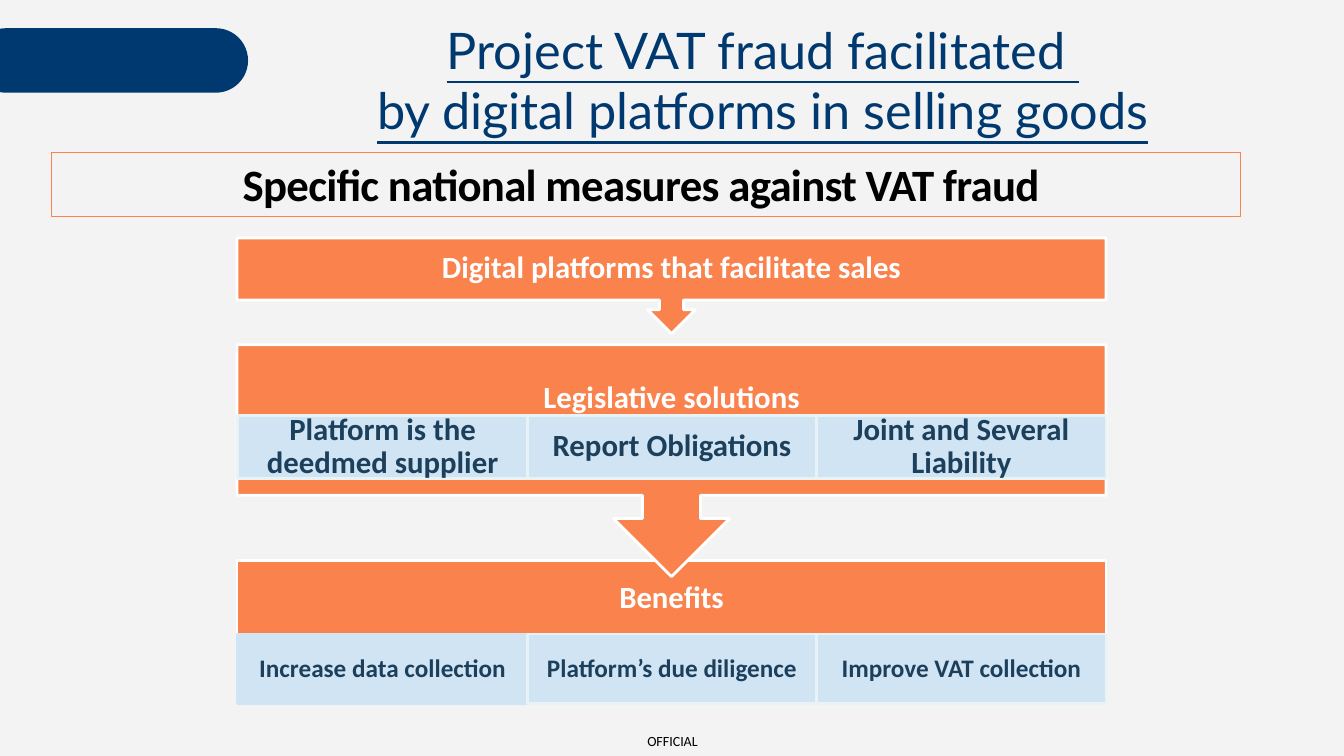
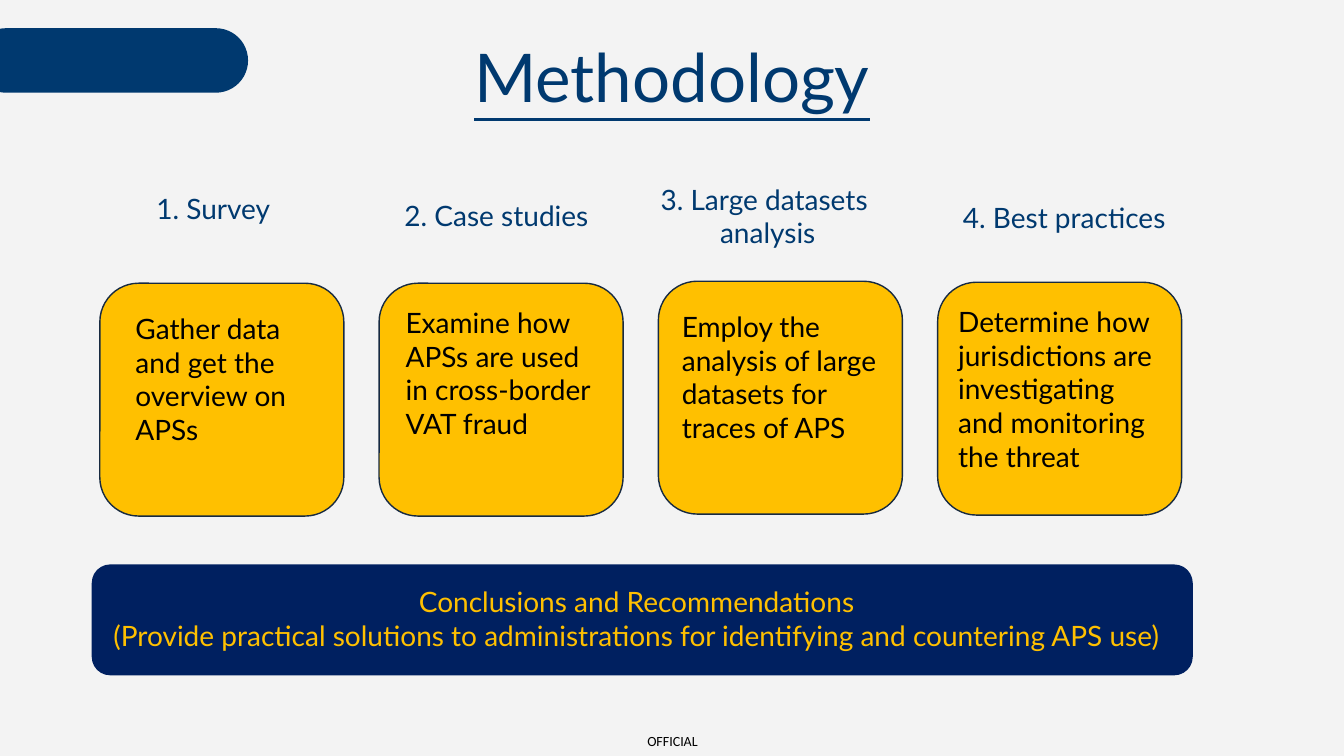
from pptx import Presentation, util as u
from pptx.dml.color import RGBColor
from pptx.enum import shapes, text

PX = 9144  # 100 px to the inch
NAVY, ORANGE, GOLD, WHITE, BLACK = "00396F", "F9824D", "FFC000", "FFFFFF", "000000"
PALE, PALE_EDGE, INK = "D1E4F4", "E7F3F4", "1C405C"
KIND, ALIGN, ANCHOR = shapes.MSO_SHAPE, text.PP_ALIGN, text.MSO_ANCHOR


def put(page, kind, box, fill=None, line=None, weight=2):
    """Add a preset shape, or a text box when kind is None."""
    place = [n * PX for n in box]
    if kind is None:
        return page.shapes.add_textbox(*place)
    shape = page.shapes.add_shape(kind, *place)
    shape.shadow.inherit = False
    if fill:
        shape.fill.solid()
        shape.fill.fore_color.rgb = RGBColor.from_string(fill)
    else:
        shape.fill.background()
    if line:
        shape.line.color.rgb = RGBColor.from_string(line)
        shape.line.width = u.Pt(weight)
    else:
        shape.line.fill.background()
    return shape


def write(shape, lines, size, color, font="Lato", bold=None, underline=None,
          align=ALIGN.CENTER, anchor=ANCHOR.TOP, insets=(10, 5, 10, 5), spacing=None):
    """Fill a shape with one paragraph per line and return the last run."""
    frame = shape.text_frame
    frame.word_wrap = True
    frame.auto_size = text.MSO_AUTO_SIZE.NONE
    frame.vertical_anchor = anchor
    frame.margin_left, frame.margin_top, frame.margin_right, frame.margin_bottom = [
        n * PX for n in insets]
    for i, words in enumerate(lines):
        para = frame.add_paragraph() if i else frame.paragraphs[0]
        para.alignment = align
        if spacing:
            para.line_spacing = spacing
        span = para.add_run()
        span.text = words
        span.font.name, span.font.size = font, u.Pt(size)
        span.font.bold, span.font.underline = bold, underline
        span.font.color.rgb = RGBColor.from_string(color)
    return span


deck = Presentation()
deck.slide_width, deck.slide_height = 1333 * PX, 750 * PX
backdrop = deck.slide_master.background.fill
backdrop.solid()
backdrop.fore_color.rgb = RGBColor.from_string("F3F3F3")

layout = deck.slide_layouts.get_by_name("Title Only")
for holder in list(layout.placeholders)[1:]:
    holder.element.getparent().remove(holder.element)

titles = [
    (["Project VAT fraud facilitated ", "by digital platforms in selling goods"],
     36, (240, 13, 1033, 131)),
    (["Methodology"], 48, (150, 28, 1033, 94)),
]
pages = []
for lines, size, box in titles:
    page = deck.slides.add_slide(layout)
    title = page.shapes.title
    title.left, title.top, title.width, title.height = [n * PX for n in box]
    write(title, lines, size, NAVY, underline=True, anchor=ANCHOR.MIDDLE)
    pages.append(page)
measures, method = pages

# Band and footer belong to the layout, so both slides show them
band = put(measures, KIND.ROUNDED_RECTANGLE, (-26, 28, 272, 64), NAVY)
band.adjustments[0] = 0.5
footer = put(measures, None, (627, 721, 80, 29))
write(footer, ["OFFICIAL"], 10, BLACK, "Calibri", anchor=ANCHOR.MIDDLE, insets=(0, 0, 0, 0))
for shared in (band, footer):
    layout.shapes.element.append(shared.element)

# Slide 1: measures
subtitle = put(measures, KIND.RECTANGLE, (51, 151, 1179, 64), None, ORANGE, 0.75)
span = write(subtitle, ["Specific national measures against VAT fraud "], 32, BLACK,
             "Calibri", bold=True)
span.font._element.set("spc", "-50")

# Stages run from the bottom up, so that each arrow lies over the stage below it
stages = [
    ("Benefits", KIND.RECTANGLE, 556, 140, 75, 629, 69, 18, 14,
     ["Increase data collection", "Platform’s due diligence", "Improve VAT collection"]),
    ("Legislative solutions", KIND.DOWN_ARROW_CALLOUT, 342, 230, 52, 412, 63, 22, 17,
     ["Platform is the deedmed supplier", "Report Obligations", "Joint and Several Liability"]),
    ("Digital platforms that facilitate sales", KIND.DOWN_ARROW_CALLOUT, 236, 95, 10,
     0, 0, 0, 0, []),
]
for name, kind, top, height, below, cell_top, cell_height, size, side, cells in stages:
    stage = put(measures, kind, (235, top, 862, height), ORANGE, WHITE)
    write(stage, [name], 22, WHITE, "Calibri", bold=True, anchor=ANCHOR.MIDDLE,
          insets=(17, 10, 17, below), spacing=0.9)
    for i, words in enumerate(cells):
        edge = PALE if name == "Benefits" and i == 0 else PALE_EDGE
        cell = put(measures, KIND.RECTANGLE, (236 + 287 * i, cell_top, 287, cell_height),
                   PALE, edge)
        write(cell, [words], size, INK, "Calibri", bold=True, anchor=ANCHOR.MIDDLE,
              insets=(side, 3, side, 3), spacing=0.9)

# Slide 2: methodology
steps = [
    (["1. Survey"], (95, 185, 233, 44), 281, (24, 17, 0, 0),
     "Gather data and get the overview on APSs"),
    (["2. Case studies"], (376, 192, 233, 44), 281, (15, 11, 17, 0),
     "Examine how APSs are used in cross-border VAT fraud"),
    (["3. Large datasets ", "analysis"], (628, 176, 267, 77), 279, (12, 17, 0, 0),
     "Employ the analysis of large datasets for traces of APS"),
    (["4. Best practices"], (939, 194, 233, 44), 280, (9, 11, 13, 0),
     "Determine how jurisdictions are investigating and monitoring the threat"),
]
for i, (heading, heading_box, top, insets, words) in enumerate(steps):
    write(put(method, None, heading_box), heading, 20, NAVY)
    card = put(method, KIND.ROUNDED_RECTANGLE, (99 + 277 * i, top, 242, 231),
               GOLD, "172A41", 1)
    write(card, [words], 20, BLACK, align=ALIGN.LEFT, insets=insets)

conclusion = put(method, KIND.ROUNDED_RECTANGLE, (91, 560, 1092, 110), "002060")
write(conclusion, [
    "Conclusions and Recommendations",
    "(Provide practical solutions to administrations for identifying and countering APS use)",
], 20, GOLD, insets=(10, 15, 21, 5))

deck.save("out.pptx")
